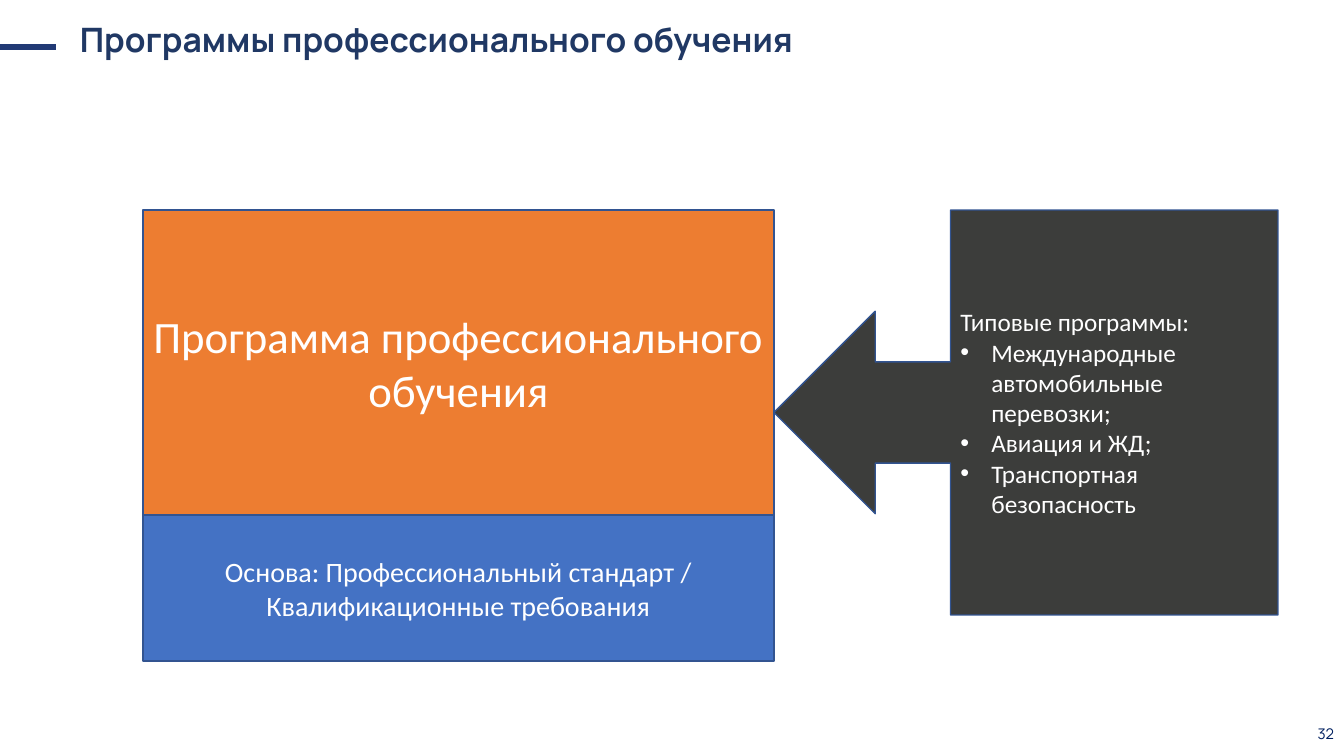
import pptx
import pptx.util
import pptx.dml.color
import pptx.enum.shapes
import pptx.enum.text
import pptx.oxml.ns
import lxml.etree

RGB = pptx.dml.color.RGBColor
SHAPE = pptx.enum.shapes.MSO_SHAPE
ALIGN = pptx.enum.text.PP_ALIGN
ANCHOR = pptx.enum.text.MSO_ANCHOR

PX = 914400 / 100.8
BULLET_INDENT = 31

WHITE = RGB(0xFF, 0xFF, 0xFF)
TITLE_NAVY = RGB(0x20, 0x38, 0x64)
NUMBER_NAVY = RGB(0x00, 0x20, 0x60)
DASH_BLUE = RGB(0x21, 0x3A, 0x75)
OUTLINE_BLUE = RGB(0x32, 0x54, 0x91)
ORANGE = RGB(0xED, 0x7D, 0x31)
BLUE = RGB(0x44, 0x72, 0xC4)
CHARCOAL = RGB(0x3C, 0x3D, 0x3B)


def px(length):
    """Convert pixels to EMU."""
    return pptx.util.Emu(round(length * PX))


def add_bullet(para):
    """Give a paragraph a hanging round bullet."""
    props = para._p.get_or_add_pPr()
    props.set("marL", str(px(BULLET_INDENT)))
    props.set("indent", str(-px(BULLET_INDENT)))
    font = lxml.etree.SubElement(props, pptx.oxml.ns.qn("a:buFont"))
    font.set("typeface", "Arial")
    mark = lxml.etree.SubElement(props, pptx.oxml.ns.qn("a:buChar"))
    mark.set("char", "•")


def write(frame, text, size, font="Calibri", color=WHITE, bold=False,
          align=ALIGN.LEFT, anchor=ANCHOR.MIDDLE, bullets=()):
    """Fill a text frame with a lead paragraph and optional bullets."""
    frame.word_wrap = True
    frame.vertical_anchor = anchor
    for index, line in enumerate((text, *bullets)):
        para = frame.add_paragraph() if index else frame.paragraphs[0]
        para.alignment = align
        if index:
            add_bullet(para)
        span = para.add_run()
        span.text = line
        span.font.name = font
        span.font.size = pptx.util.Pt(size)
        span.font.bold = bold
        span.font.color.rgb = color


def add_block(slide, kind, box, fill, text, size, **text_format):
    """Add a filled, outlined shape with text."""
    block = slide.shapes.add_shape(kind, *map(px, box))
    block.shadow.inherit = False
    block.fill.solid()
    block.fill.fore_color.rgb = fill
    block.line.color.rgb = OUTLINE_BLUE
    block.line.width = pptx.util.Pt(1)
    write(block.text_frame, text, size, **text_format)


def add_header(slide, box):
    """Add the dash at the slide edge and the title."""
    left, top, width, height = box
    dash_y = px(top + 33)
    dash = slide.shapes.add_connector(
        pptx.enum.shapes.MSO_CONNECTOR.STRAIGHT, px(left), dash_y, px(left + 56), dash_y)
    dash.line.color.rgb = DASH_BLUE
    dash.line.width = pptx.util.Pt(4.5)
    lxml.etree.SubElement(dash._element.spPr, pptx.oxml.ns.qn("a:effectLst"))
    title = slide.shapes.add_textbox(px(left + 70), px(top), px(width - 70), px(height))
    write(title.text_frame, "Программы профессионального обучения", 24,
          font="Manrope", color=TITLE_NAVY, bold=True, anchor=ANCHOR.TOP)


def add_program(slide, box):
    """Stack the training program on its basis."""
    left, top, width, height = box
    basis_height = 146
    program_height = height - basis_height
    add_block(slide, SHAPE.RECTANGLE, (left, top, width, program_height), ORANGE,
              "Программа профессионального обучения", 32, align=ALIGN.CENTER)
    add_block(slide, SHAPE.RECTANGLE, (left, top + program_height, width, basis_height), BLUE,
              "Основа: Профессиональный стандарт / Квалификационные требования", 20,
              align=ALIGN.CENTER)


def add_typical_programs(slide, box):
    """Add the callout whose arrow points at the program."""
    add_block(slide, SHAPE.LEFT_ARROW_CALLOUT, box, CHARCOAL, "Типовые программы:", 18,
              align=ALIGN.JUSTIFY,
              bullets=("Международные автомобильные перевозки;",
                       "Авиация и ЖД;",
                       "Транспортная безопасность"))


def add_page_number(slide, box):
    """Add the slide number in the corner."""
    number = slide.shapes.add_textbox(*map(px, box))
    write(number.text_frame, "32", 10.5, font="Manrope", color=NUMBER_NAVY, align=ALIGN.RIGHT)


def main():
    """Build and save the deck."""
    deck = pptx.Presentation()
    deck.slide_width = px(1344)
    deck.slide_height = px(756)
    slide = deck.slides.add_slide(deck.slide_layouts[6])
    add_header(slide, (0, 14, 1057, 50))
    add_page_number(slide, (1291, 714, 53, 40))
    add_program(slide, (143, 210, 631, 451))
    add_typical_programs(slide, (774, 210, 504, 405))
    deck.save("out.pptx")


if __name__ == "__main__":
    main()
